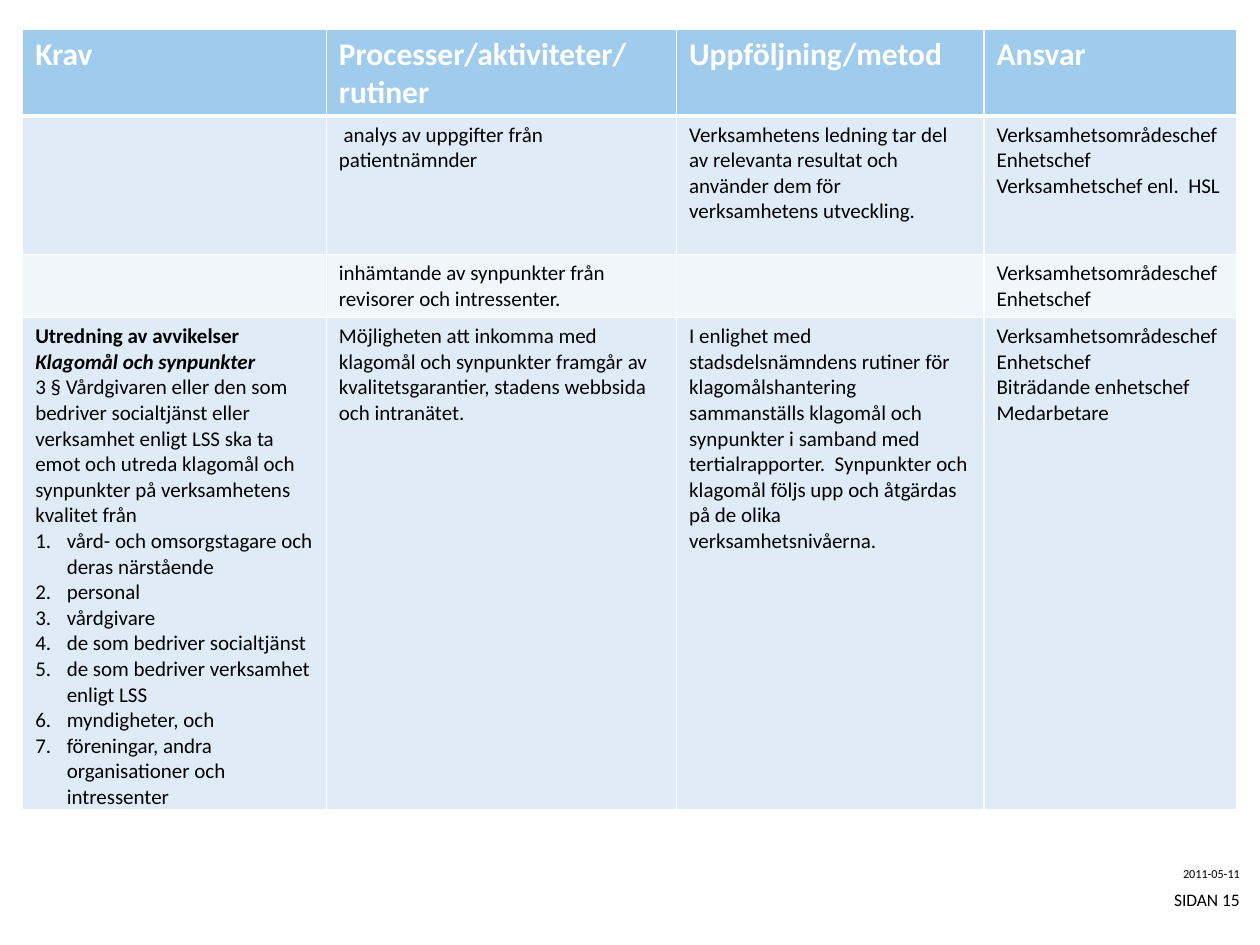
from lxml import etree
from pptx import Presentation, util as u
from pptx.dml.color import RGBColor
from pptx.enum import text
from pptx.oxml import ns

HEADERS = ["Krav", "Processer/aktiviteter/rutiner", "Uppföljning/metod", "Ansvar"]
CHIEFS = ["Verksamhetsområdeschef", "Enhetschef"]
SOURCES = [
    "vård- och omsorgstagare och deras närstående",
    "personal",
    "vårdgivare",
    "de som bedriver socialtjänst",
    "de som bedriver verksamhet enligt LSS",
    "myndigheter, och",
    "föreningar, andra organisationer och intressenter",
]
HEADING, SUBHEADING = "Utredning av avvikelser", "Klagomål och synpunkter"
DUTY = ("3 § Vårdgivaren eller den som bedriver socialtjänst eller verksamhet enligt LSS "
        "ska ta emot och utreda klagomål och synpunkter på verksamhetens kvalitet från")
ROWS = [
    [[h] for h in HEADERS],
    [[],
     [" analys av uppgifter från patientnämnder"],
     ["Verksamhetens ledning tar del av relevanta resultat och använder dem för "
      "verksamhetens utveckling."],
     CHIEFS + ["Verksamhetschef enl.  HSL"]],
    [[], ["inhämtande av synpunkter från revisorer och intressenter."], [], CHIEFS],
    [[HEADING, SUBHEADING, DUTY] + SOURCES,
     ["Möjligheten att inkomma med klagomål och synpunkter framgår av "
      "kvalitetsgarantier, stadens webbsida och intranätet."],
     ["I enlighet med stadsdelsnämndens rutiner för klagomålshantering sammanställs "
      "klagomål och synpunkter i samband med tertialrapporter.  Synpunkter och klagomål "
      "följs upp och åtgärdas på de olika verksamhetsnivåerna."],
     CHIEFS + ["Biträdande enhetschef", "Medarbetare"]],
]
COLUMN_WIDTHS = [2.41, 2.78, 2.44, 2.01]
ROW_HEIGHTS = [0.69, 1.1, 0.5, 3.9]
ROW_FILLS = ["9FCBED", "DFECF8", "F0F6FC", "DFECF8"]
FOOTER = [("2011-05-11", 7), ("SIDAN 15", 10)]


def color(value):
    """Turn a hex string into a colour."""
    return RGBColor.from_string(value)


def style(p, size, value, bold=False, italic=False):
    """Format every run of a paragraph."""
    for r in p.runs:
        r.font.name, r.font.size = "Calibri", u.Pt(size)
        r.font.bold, r.font.italic = bold, italic
        r.font.color.rgb = color(value)


def number(p):
    """Give a paragraph a hanging automatic number."""
    pPr = p._p.get_or_add_pPr()
    pPr.set("marL", str(u.Inches(0.25)))
    pPr.set("indent", str(-u.Inches(0.25)))
    etree.SubElement(pPr, ns.qn("a:buFont"), typeface="+mj-lt")
    etree.SubElement(pPr, ns.qn("a:buAutoNum"), type="arabicPeriod")


def border(cell, top, bottom):
    """Draw white lines round a cell."""
    tcPr = cell._tc.get_or_add_tcPr()
    for i, (side, width) in enumerate([("L", 1), ("R", 1), ("T", top), ("B", bottom)]):
        ln = etree.Element(ns.qn(f"a:ln{side}"), w=str(u.Pt(width)))
        fill = etree.SubElement(ln, ns.qn("a:solidFill"))
        etree.SubElement(fill, ns.qn("a:srgbClr"), val="FFFFFF")
        tcPr.insert(i, ln)


def fill_cell(cell, row, lines):
    """Write and format one table cell."""
    cell.fill.solid()
    cell.fill.fore_color.rgb = color(ROW_FILLS[row])
    border(cell, 3 if row == 1 else 1, 3 if row == 0 else 1)
    cell.margin_bottom = 0
    cell.text_frame.text = "\n".join(lines)
    for p in cell.text_frame.paragraphs:
        if p.text in SOURCES:
            number(p)
        if row == 0:
            style(p, 18, "FFFFFF", True)
        else:
            style(p, 12, "000000", p.text in (HEADING, SUBHEADING), p.text == SUBHEADING)


def main():
    """Build the slide."""
    prs = Presentation()
    prs.slide_width, prs.slide_height = u.Inches(10), u.Inches(7.5)
    s = prs.slides.add_slide(prs.slide_layouts[6])

    table = s.shapes.add_table(
        len(ROWS), len(HEADERS), u.Inches(0.18), u.Inches(0.23),
        u.Inches(sum(COLUMN_WIDTHS)), u.Inches(sum(ROW_HEIGHTS))).table
    for column, width in zip(table.columns, COLUMN_WIDTHS):
        column.width = u.Inches(width)
    for i, (cells, height) in enumerate(zip(ROWS, ROW_HEIGHTS)):
        table.rows[i].height = u.Inches(height)
        for j, lines in enumerate(cells):
            fill_cell(table.cell(i, j), i, lines)

    for i, (line, size) in enumerate(FOOTER):
        sp = s.shapes.add_textbox(u.Inches(8.8), u.Inches(6.84 + 0.2 * i),
                                  u.Inches(1.04), u.Inches(0.19))
        tf = sp.text_frame
        tf.word_wrap = True
        tf.vertical_anchor = text.MSO_ANCHOR.MIDDLE
        tf.margin_left = tf.margin_right = tf.margin_top = tf.margin_bottom = 0
        p = tf.paragraphs[0]
        p.text, p.alignment = line, text.PP_ALIGN.RIGHT
        style(p, size, "000000")

    prs.save("out.pptx")


if __name__ == "__main__":
    main()
